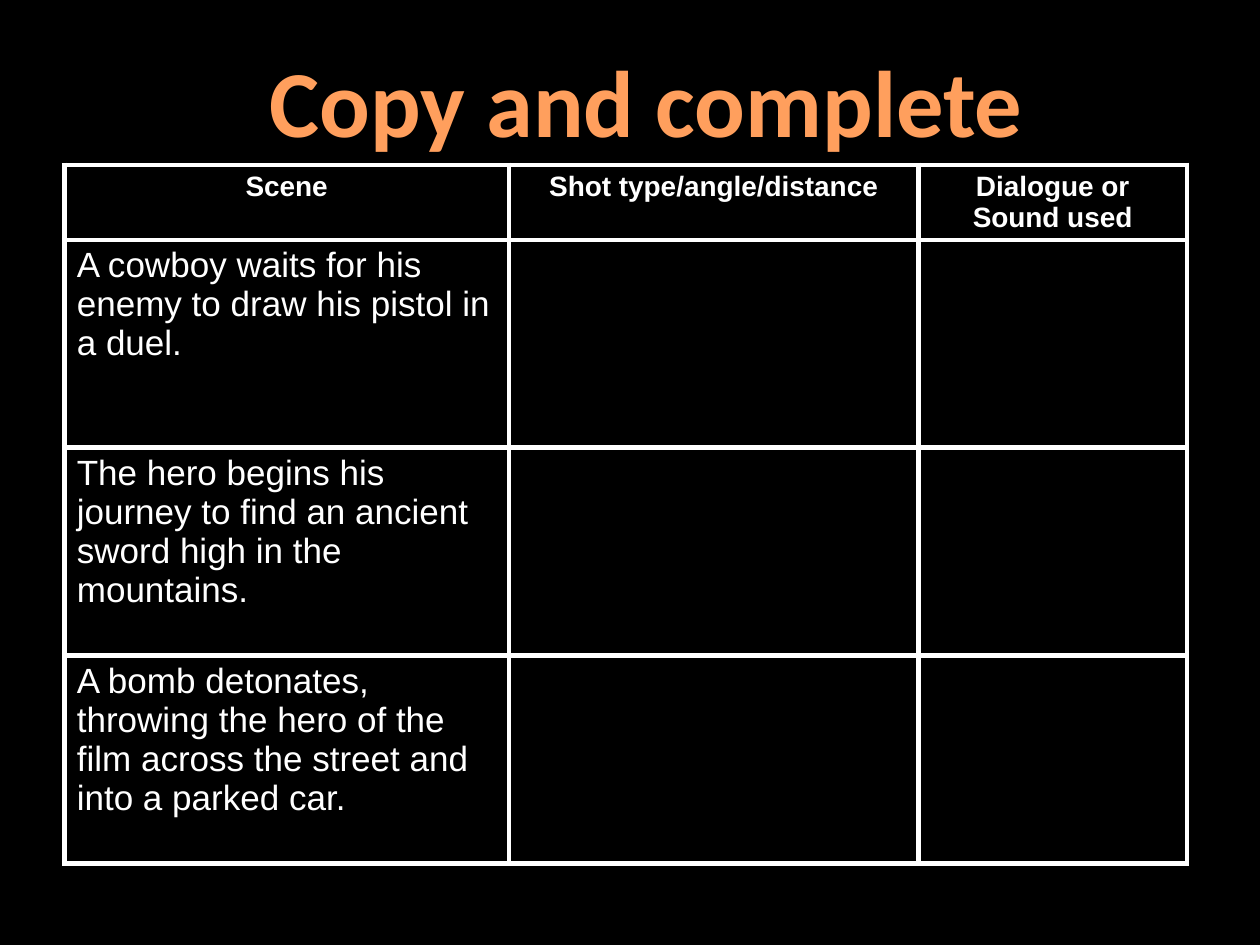
from lxml import etree
from pptx import Presentation
from pptx.dml.color import RGBColor
from pptx.enum.text import MSO_AUTO_SIZE, PP_ALIGN
from pptx.oxml.ns import qn
from pptx.util import Inches, Pt

CENTER, LEFT = PP_ALIGN.CENTER, PP_ALIGN.LEFT
FIT_SHAPE = MSO_AUTO_SIZE.SHAPE_TO_FIT_TEXT
BLACK, WHITE = "000000", "FFFFFF"
COLUMN_WIDTHS = (3.53, 3.25, 2.13)
HEADER_HEIGHT, SCENE_HEIGHT = 0.59, 1.65
BORDER_WIDTH = 3
HEADINGS = ("Scene", "Shot type/angle/distance", "Dialogue or Sound used")
SCENES = (
    "A cowboy waits for his enemy to draw his pistol in a duel.",
    "The hero begins his journey to find an ancient sword high in the mountains.",
    "A bomb detonates, throwing the hero of the film across the street and into a parked car.",
)
HEADING_FORMAT = {"name": "Arial", "size": Pt(16), "bold": True}
SCENE_FORMAT = {"name": "Arial", "size": Pt(20), "bold": False}
TITLE_FORMAT = {"name": "Calibri", "size": Pt(54), "bold": True}
TITLE_GRADIENT = ("FFA367", "FF9F5D", "F38E3A", "FF9F5D", "FFA367")


def paint(fill, color):
    fill.solid()
    fill.fore_color.rgb = RGBColor.from_string(color)


def write_text(text_frame, text, text_format, alignment):
    paragraph = text_frame.paragraphs[0]
    paragraph.alignment = alignment
    run = paragraph.add_run()
    run.text = text
    for name, value in text_format.items():
        setattr(run.font, name, value)
    return run


def paint_gradient(run, colors):
    """Fill the letters from top to bottom with evenly spaced colours."""
    run.font.fill.gradient()
    run.font.fill.gradient_angle = 270
    stops = next(run.font._element.iter(qn("a:gsLst")))
    for stop in list(stops):
        stops.remove(stop)
    for index, color in enumerate(colors):
        position = 100000 * index // (len(colors) - 1)
        stop = etree.SubElement(stops, qn("a:gs"), pos=str(position))
        etree.SubElement(stop, qn("a:srgbClr"), val=color)


def add_borders(cell, color, width):
    properties = cell._tc.get_or_add_tcPr()
    for index, side in enumerate(("a:lnL", "a:lnR", "a:lnT", "a:lnB")):
        line = etree.Element(qn(side), w=str(Pt(width)))
        fill = etree.SubElement(line, qn("a:solidFill"))
        etree.SubElement(fill, qn("a:srgbClr"), val=color)
        properties.insert(index, line)


def add_title(slide, text):
    box = slide.shapes.add_textbox(Inches(2.01), Inches(0.29), Inches(6.24), Inches(1.01))
    box.text_frame.word_wrap = False
    box.text_frame.auto_size = FIT_SHAPE
    run = write_text(box.text_frame, text, TITLE_FORMAT, CENTER)
    paint_gradient(run, TITLE_GRADIENT)


def add_scene_table(slide):
    heights = [HEADER_HEIGHT] + [SCENE_HEIGHT] * len(SCENES)
    table = slide.shapes.add_table(
        len(heights), len(COLUMN_WIDTHS), Inches(0.51), Inches(1.31),
        Inches(sum(COLUMN_WIDTHS)), Inches(sum(heights)),
    ).table
    for column, width in zip(table.columns, COLUMN_WIDTHS):
        column.width = Inches(width)
    for row, height in zip(table.rows, heights):
        row.height = Inches(height)
    for cell in table.iter_cells():
        paint(cell.fill, BLACK)
        add_borders(cell, WHITE, BORDER_WIDTH)
    for index, heading in enumerate(HEADINGS):
        run = write_text(table.cell(0, index).text_frame, heading, HEADING_FORMAT, CENTER)
        paint(run.font.fill, WHITE)
    for index, scene in enumerate(SCENES, start=1):
        run = write_text(table.cell(index, 0).text_frame, scene, SCENE_FORMAT, LEFT)
        paint(run.font.fill, WHITE)


def main():
    presentation = Presentation()
    presentation.slide_width, presentation.slide_height = Inches(10), Inches(7.5)
    slide = presentation.slides.add_slide(presentation.slide_layouts[6])
    paint(slide.background.fill, BLACK)
    add_scene_table(slide)
    add_title(slide, "Copy and complete")
    presentation.save("out.pptx")


if __name__ == "__main__":
    main()
